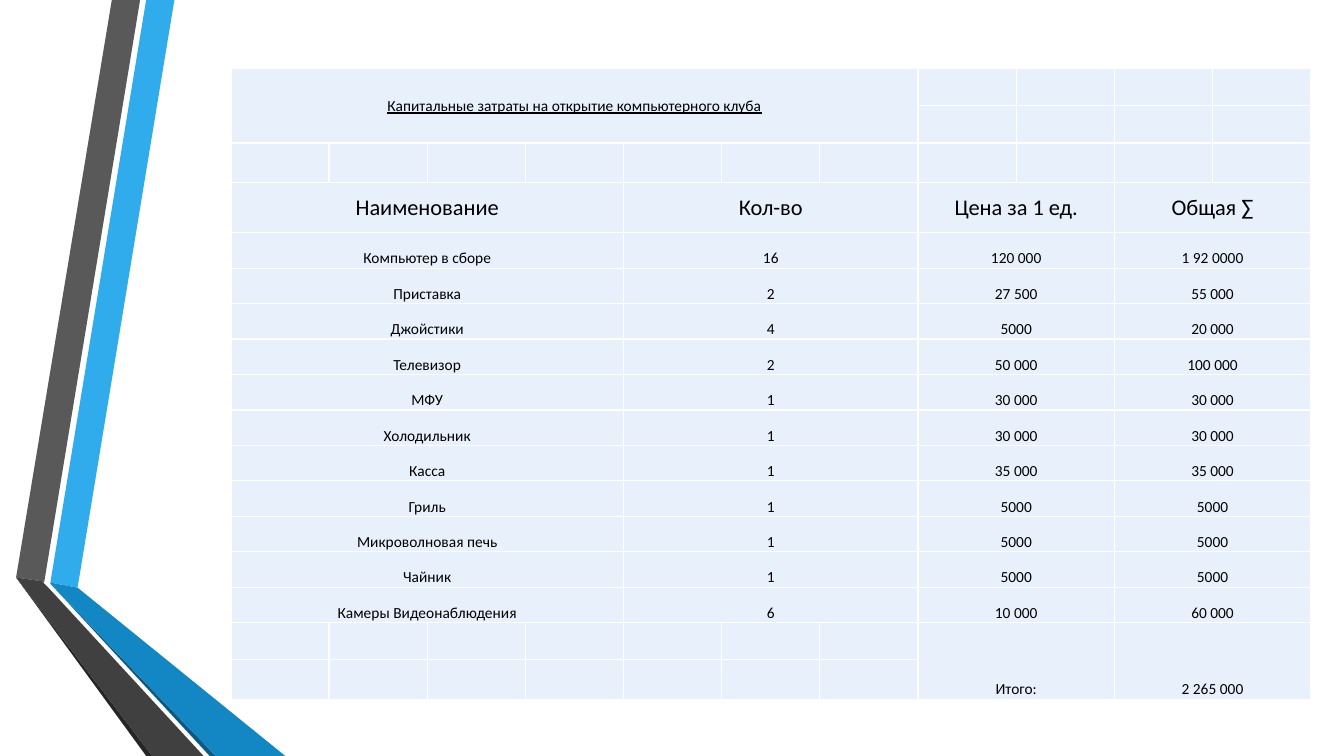
from lxml.etree import SubElement
from pptx import Presentation
from pptx.dml.color import RGBColor
from pptx.enum.text import MSO_ANCHOR as ANCHOR, PP_ALIGN as ALIGN
from pptx.oxml.ns import qn
from pptx.util import Inches, Pt

COLS, ROWS = 1333, 750
WIDTH, HEIGHT = Inches(13.33), Inches(7.5)
CELL_FILL, BORDER, TEXT = "E8F1FB", "FFFFFF", "000000"
BODY = {"size": Pt(11), "name": "Calibri", "underline": False}
HEAD = {**BODY, "size": Pt(16)}
TITLE = {**BODY, "underline": True}
MARGINS = {"margin_left": Inches(0.01), "margin_right": Inches(0.01),
           "margin_top": Inches(0.01), "margin_bottom": 0}

RIBBONS = [
    ("30ACEC", [(50, 578), (77, 583), (173, 0), (145, 0)]),
    ("595959", [(139, 0), (111, 0), (16, 573), (44, 577)]),
    ("262626", [(16, 573), (145, 750), (151, 750)]),
    ("0C5A82", [(50, 579), (208, 750), (214, 750)]),
    ("1287C3", [(50, 579), (214, 750), (283, 750), (77, 583), (50, 578)]),
    ("404040", [(202, 750), (48, 583), (43, 578), (44, 577), (16, 573), (151, 750)]),
]

HEADINGS = ["Наименование", "Кол-во", "Цена за 1 ед.", "Общая ∑"]
ITEMS = [
    ["Компьютер в сборе", "16", "120 000", "1 92 0000"],
    ["Приставка", "2", "27 500", "55 000"],
    ["Джойстики", "4", "5000", "20 000"],
    ["Телевизор", "2", "50 000", "100 000"],
    ["МФУ", "1", "30 000", "30 000"],
    ["Холодильник", "1", "30 000", "30 000"],
    ["Касса", "1", "35 000", "35 000"],
    ["Гриль", "1", "5000", "5000"],
    ["Микроволновая печь", "1", "5000", "5000"],
    ["Чайник", "1", "5000", "5000"],
    ["Камеры Видеонаблюдения", "6", "10 000", "60 000"],
]
SPANS = [(0, 4), (4, 3), (7, 2), (9, 2)]
TOP_ROWS, BOTTOM_ROWS = [37, 37, 39, 50], [37, 39]


def rgb(value):
    """Turn a hex string into a colour."""
    return RGBColor.from_string(value)


def grid_box(left, top, width, height):
    """Convert grid columns and rows into a box in slide units."""
    col, row = WIDTH / COLS, HEIGHT / ROWS
    return round(left * col), round(top * row), round(width * col), round(height * row)


def apply(target, values):
    """Set every attribute named in a dict of format values."""
    for name, value in values.items():
        setattr(target, name, value)


def add_ribbons(slide, box):
    """Draw the folded ribbons, scaled to the slide grid, in the box."""
    left, top, width, height = box
    for color, points in RIBBONS:
        outline = [(left + round(x * width / COLS), top + round(y * height / ROWS))
                   for x, y in points]
        builder = slide.shapes.build_freeform(*outline[0])
        builder.add_line_segments(outline[1:], close=True)
        sp = builder.convert_to_shape()
        sp.shadow.inherit = False
        sp.fill.solid()
        sp.fill.fore_color.rgb = rgb(color)
        sp.line.fill.background()


def style_cell(cell):
    """Give a cell thin white borders, a pale fill and tight margins."""
    tc_pr = cell._tc.get_or_add_tcPr()
    for side in ("lnL", "lnR", "lnT", "lnB"):
        line = SubElement(tc_pr, qn(f"a:{side}"), w=str(Pt(1)))
        SubElement(SubElement(line, qn("a:solidFill")), qn("a:srgbClr"), val=BORDER)
    cell.fill.solid()
    cell.fill.fore_color.rgb = rgb(CELL_FILL)
    apply(cell, MARGINS)


def fill_cell(table, row, col, text, size, font, anchor):
    """Merge a block of cells and write centred text in it."""
    rows, cols = size
    cell = table.cell(row, col)
    cell.merge(table.cell(row + rows - 1, col + cols - 1))
    cell.vertical_anchor = anchor
    p = cell.text_frame.paragraphs[0]
    p.alignment = ALIGN.CENTER
    r = p.add_run()
    r.text = text
    apply(r.font, font)
    r.font.color.rgb = rgb(TEXT)


def add_costs(slide, box):
    """Place the table of capital costs in the box."""
    left, top, width, height = box
    fixed = sum(TOP_ROWS + BOTTOM_ROWS) * HEIGHT / ROWS
    item_height = round((height - fixed) / len(ITEMS))
    heights = [[round(h * HEIGHT / ROWS) for h in rows] for rows in (TOP_ROWS, BOTTOM_ROWS)]
    heights = heights[0] + [item_height] * len(ITEMS) + heights[1]
    columns = sum(span for _, span in SPANS)
    table = slide.shapes.add_table(len(heights), columns, *box).table
    apply(table, {"first_row": False, "horz_banding": False})
    for column in table.columns:
        column.width = round(width / columns)
    for row, row_height in zip(table.rows, heights):
        row.height = row_height
    for cell in table.iter_cells():
        style_cell(cell)

    fill_cell(table, 0, 0, "Капитальные затраты на открытие компьютерного клуба",
              (2, 7), TITLE, ANCHOR.MIDDLE)
    head_row = len(TOP_ROWS) - 1
    for i, values in enumerate([HEADINGS] + ITEMS):
        font, anchor = (BODY, ANCHOR.BOTTOM) if i else (HEAD, ANCHOR.MIDDLE)
        for (col, span), text in zip(SPANS, values):
            fill_cell(table, head_row + i, col, text, (1, span), font, anchor)
    total_row = len(TOP_ROWS) + len(ITEMS)
    for (col, span), text in zip(SPANS[2:], ["Итого:", "2 265 000"]):
        fill_cell(table, total_row, col, text, (2, span), BODY, ANCHOR.BOTTOM)


def main():
    """Build the slide and save it."""
    prs = Presentation()
    apply(prs, {"slide_width": WIDTH, "slide_height": HEIGHT})
    slide = prs.slides.add_slide(prs.slide_layouts[6])
    add_ribbons(slide, grid_box(0, 0, COLS, ROWS))
    add_costs(slide, grid_box(229, 68, 1071, 626))
    prs.save("out.pptx")


if __name__ == "__main__":
    main()
